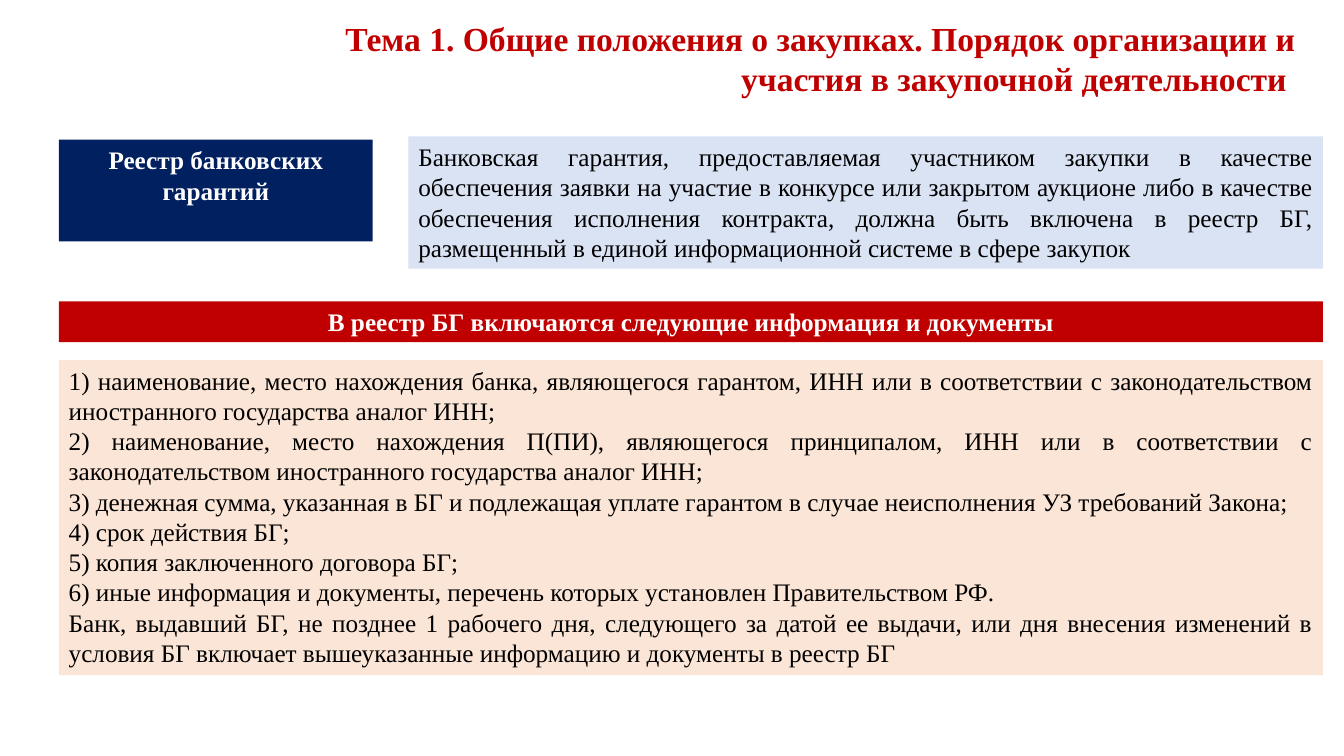
from dataclasses import dataclass

from pptx import Presentation
from pptx.dml.color import RGBColor
from pptx.enum.shapes import MSO_SHAPE
from pptx.enum.text import MSO_ANCHOR, MSO_AUTO_SIZE, PP_ALIGN
from pptx.shapes.autoshape import Shape
from pptx.slide import Slide
from pptx.text.text import TextFrame
from pptx.util import Emu, Pt

EMU_PER_PX = 9525
FONT = "Times New Roman"
LEFT, RIGHT = 56, 1260


@dataclass(frozen=True)
class Panel:
    left: int
    top: int
    width: int
    height: int
    fill: str
    paragraphs: tuple[str, ...]
    align: PP_ALIGN = PP_ALIGN.JUSTIFY
    color: str = "000000"
    bold: bool = False


PANELS = (
    Panel(LEFT, 133, 299, 97, "002060", ("Реестр банковских гарантий",),
          PP_ALIGN.CENTER, "FFFFFF", True),
    Panel(389, 130, RIGHT - 389, 126, "DAE3F3", (
        "Банковская гарантия, предоставляемая участником закупки в качестве "
        "обеспечения заявки на участие в конкурсе или закрытом аукционе либо в качестве "
        "обеспечения исполнения контракта, должна быть включена в реестр БГ, "
        "размещенный в единой информационной системе в сфере закупок",
    )),
    Panel(LEFT, 343, RIGHT - LEFT, 300, "FBE5D6", (
        "1) наименование, место нахождения банка, являющегося гарантом, ИНН или "
        "в соответствии с законодательством иностранного государства аналог ИНН;",
        "2) наименование, место нахождения П(ПИ), являющегося принципалом, ИНН или "
        "в соответствии с законодательством иностранного государства аналог ИНН;",
        "3) денежная сумма, указанная в БГ и подлежащая уплате гарантом в случае "
        "неисполнения УЗ требований Закона;",
        "4) срок действия БГ;",
        "5) копия заключенного договора БГ;",
        "6) иные информация и документы, перечень которых установлен Правительством РФ.",
        "Банк, выдавший БГ, не позднее 1 рабочего дня, следующего за датой ее выдачи, "
        "или дня внесения изменений в условия БГ включает вышеуказанные информацию "
        "и документы в реестр БГ",
    )),
    Panel(LEFT, 287, RIGHT - LEFT, 39, "C00000",
          ("В реестр БГ включаются следующие информация и документы",),
          PP_ALIGN.CENTER, "FFFFFF", True),
)


def px(length: int) -> Emu:
    return Emu(length * EMU_PER_PX)


def rgb(color: str) -> RGBColor:
    return RGBColor.from_string(color)


def write_text(frame: TextFrame, paragraphs: tuple[str, ...], *, size: int,
               color: str, bold: bool, align: PP_ALIGN) -> None:
    frame.word_wrap = True
    frame.auto_size = MSO_AUTO_SIZE.NONE
    frame.vertical_anchor = MSO_ANCHOR.TOP
    for index, text in enumerate(paragraphs):
        para = frame.add_paragraph() if index else frame.paragraphs[0]
        para.alignment = align
        para.line_spacing = 1.0
        span = para.add_run()
        span.text = text
        span.font.name = FONT
        span.font.size = Pt(size)
        span.font.bold = bold
        span.font.color.rgb = rgb(color)


def place_title(page: Slide) -> None:
    title = page.shapes.title
    title.left, title.top = px(222), px(12)
    title.width, title.height = px(1021), px(87)
    write_text(
        title.text_frame,
        ("Тема 1. Общие положения о закупках. Порядок организации и "
         "участия в закупочной деятельности ",),
        size=24, color="C00000", bold=True, align=PP_ALIGN.RIGHT,
    )


def draw_panel(page: Slide, panel: Panel) -> Shape:
    box = page.shapes.add_shape(
        MSO_SHAPE.RECTANGLE, px(panel.left), px(panel.top),
        px(panel.width), px(panel.height),
    )
    box.shadow.inherit = False
    box.fill.solid()
    box.fill.fore_color.rgb = rgb(panel.fill)
    box.line.fill.background()
    write_text(box.text_frame, panel.paragraphs, size=18, color=panel.color,
               bold=panel.bold, align=panel.align)
    return box


def main() -> None:
    deck = Presentation()
    deck.slide_width, deck.slide_height = px(1280), px(720)
    page = deck.slides.add_slide(deck.slide_layouts.get_by_name("Title Only"))
    place_title(page)
    for panel in PANELS:
        draw_panel(page, panel)
    deck.save("out.pptx")


if __name__ == "__main__":
    main()
